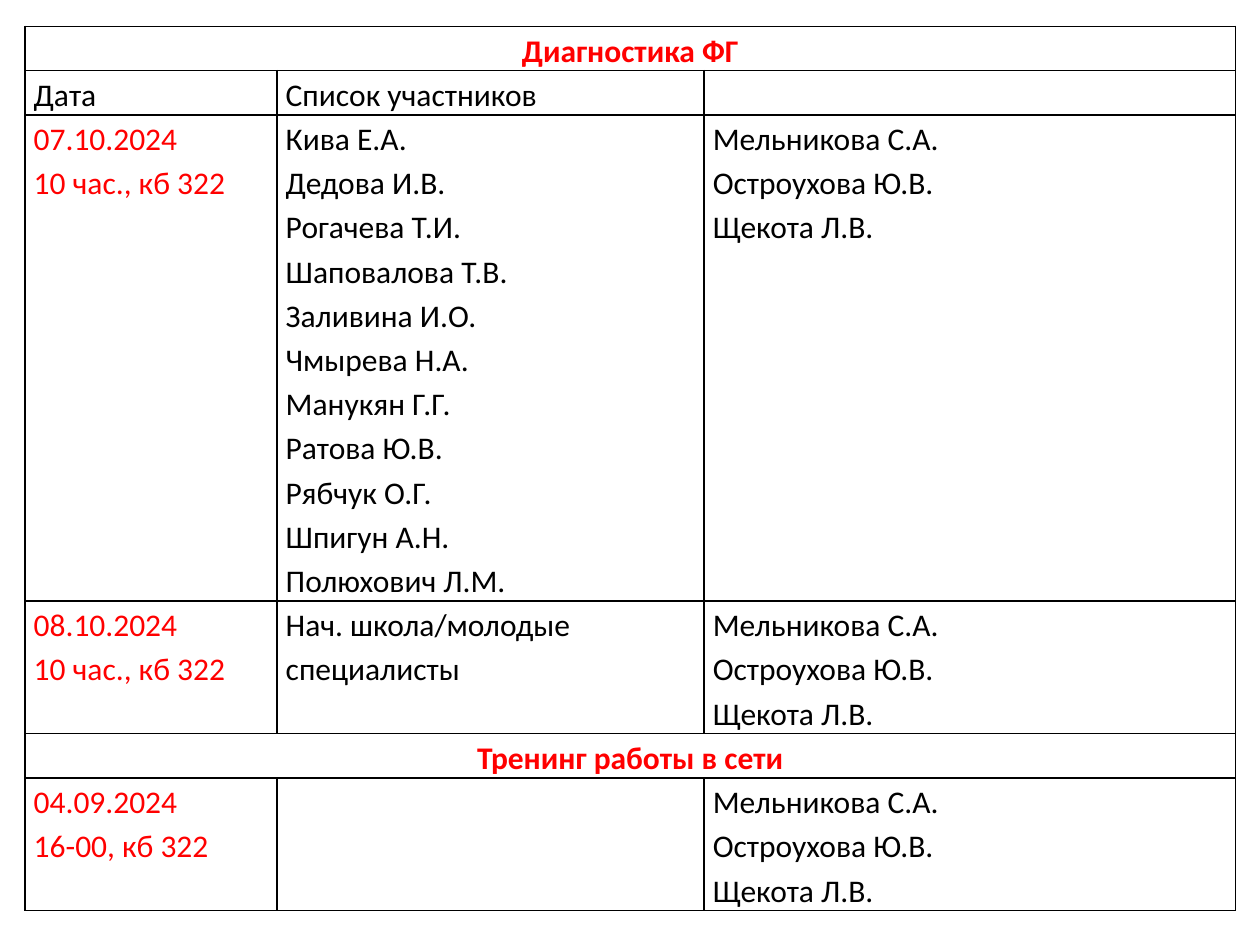
from lxml import etree
from pptx import Presentation, util as u
from pptx.dml.color import RGBColor
from pptx.enum import text
from pptx.oxml import ns


def rgb(value):
    return RGBColor.from_string(value)


def add_borders(cell):
    tc_pr = cell._tc.get_or_add_tcPr()
    for i, side in enumerate(("lnL", "lnR", "lnT", "lnB")):
        ln = etree.Element(ns.qn(f"a:{side}"), w=str(u.Pt(1)))
        fill = etree.SubElement(ln, ns.qn("a:solidFill"))
        etree.SubElement(fill, ns.qn("a:srgbClr"), val="000000")
        tc_pr.insert(i, ln)


RED, BLACK, WHITE = "FF0000", "000000", "FFFFFF"
LEADERS = ["Мельникова С.А.", "Остроухова Ю.В.", "Щекота Л.В."]
PARTICIPANTS = [
    "Кива Е.А.", "Дедова И.В.", "Рогачева Т.И.", "Шаповалова Т.В.",
    "Заливина И.О.", "Чмырева Н.А.", "Манукян Г.Г.", "Ратова Ю.В.",
    "Рябчук О.Г.", "Шпигун А.Н.", "Полюхович Л.М.",
]

# Each cell is a list of paragraphs; a row with one cell is a section title
rows = [
    [["Диагностика ФГ"]],
    [["Дата"], ["Список участников"], []],
    [["07.10.2024", "10 час., кб 322"], PARTICIPANTS, LEADERS],
    [["08.10.2024", "10 час., кб 322"], ["Нач. школа/молодые специалисты"], LEADERS],
    [["Тренинг работы в сети"]],
    [["04.09.2024", "16-00, кб 322"], [], LEADERS],
]
col_widths = [5.08, 8.61, 10.72]
row_heights = [0.81, 0.81, 9.75, 2.46, 0.81, 2.46]
margins = {"margin_left": u.Cm(0.18), "margin_right": u.Cm(0.18),
           "margin_top": 0, "margin_bottom": 0}

prs = Presentation()
prs.slide_width, prs.slide_height = u.Cm(25.4), u.Cm(19.05)
s = prs.slides.add_slide(prs.slide_layouts[6])

# Table grid
table = s.shapes.add_table(len(rows), len(col_widths), u.Cm(0.5), u.Cm(0.53),
                           u.Cm(sum(col_widths)), u.Cm(sum(row_heights))).table
table.first_row = table.horz_banding = False
for col, width in zip(table.columns, col_widths):
    col.width = u.Cm(width)
for row, height in zip(table.rows, row_heights):
    row.height = u.Cm(height)

# Cell look
for cell in table.iter_cells():
    for name, value in margins.items():
        setattr(cell, name, value)
    cell.fill.solid()
    cell.fill.fore_color.rgb = rgb(WHITE)
    add_borders(cell)

# Cell text
for i, row in enumerate(rows):
    title = len(row) == 1
    if title:
        table.cell(i, 0).merge(table.cell(i, len(col_widths) - 1))
    for j, lines in enumerate(row):
        tf = table.cell(i, j).text_frame
        tf.text = "\n".join(lines)
        is_date = j == 0 and len(lines) > 1
        fmt = {"name": "Calibri", "size": u.Pt(18), "bold": title}
        for p in tf.paragraphs:
            p.line_spacing = 1.15
            p.alignment = text.PP_ALIGN.CENTER if title else text.PP_ALIGN.LEFT
            for r in p.runs:
                for name, value in fmt.items():
                    setattr(r.font, name, value)
                r.font.color.rgb = rgb(RED if title or is_date else BLACK)

prs.save("out.pptx")
